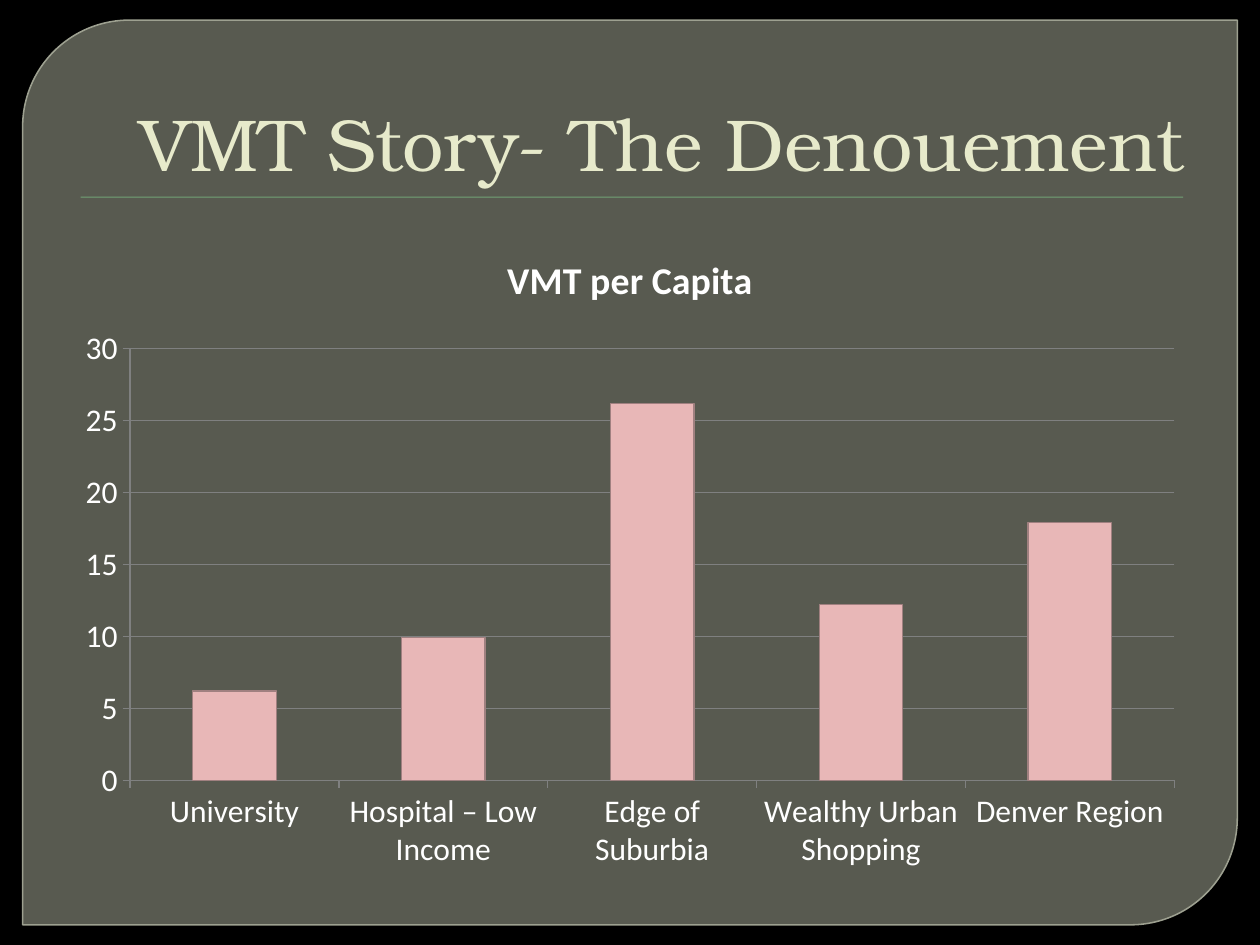
"""Build the VMT per capita slide with its framed panel and column chart."""
import pptx
import pptx.chart.data
import pptx.dml.color
import pptx.enum.chart
import pptx.enum.shapes
import pptx.enum.text
import pptx.oxml
import pptx.oxml.ns
import pptx.util
from pptx.util import Inches

COLORS = {
    "background": "000000",
    "panel": "888B7B",
    "panel_line": "9DA090",
    "rule": "72A376",
    "title": "E7EACB",
    "chart_text": "FFFFFF",
    "bar": "E8B7B7",
    "bar_line": "A08080",
    "grid": "7F8080",
}
VMT_PER_CAPITA = {
    "University": 6.2,
    "Hospital – Low Income": 9.9,
    "Edge of Suburbia": 26.2,
    "Wealthy Urban Shopping": 12.2,
    "Denver Region": 17.9,
}


def color(name):
    return pptx.dml.color.RGBColor.from_string(COLORS[name])


def set_fill(fill, name):
    fill.solid()
    fill.fore_color.rgb = color(name)


def set_line(line, name, width):
    set_fill(line.fill, name)
    line.width = pptx.util.Pt(width)


def set_font(font, family, size, name, bold=False):
    font.name = family
    font.size = pptx.util.Pt(size)
    font.bold = bold
    font.color.rgb = color(name)


def set_opacity(shape, percent):
    namespace = pptx.oxml.ns.nsdecls("a")
    alpha = pptx.oxml.parse_xml(f'<a:alpha {namespace} val="{percent * 1000}"/>')
    shape.element.spPr.find(".//" + pptx.oxml.ns.qn("a:srgbClr")).append(alpha)


def add_panel(slide):
    panel = slide.shapes.add_shape(
        pptx.enum.shapes.MSO_SHAPE.ROUND_2_DIAG_RECTANGLE,
        Inches(0.18), Inches(0.16), Inches(9.64), Inches(7.18))
    panel.adjustments[0] = 0.118
    panel.adjustments[1] = 0
    panel.shadow.inherit = False
    set_fill(panel.fill, "panel")
    set_opacity(panel, 65)
    set_line(panel.line, "panel_line", 0.87)


def add_rule(slide):
    rule = slide.shapes.add_shape(
        pptx.enum.shapes.MSO_SHAPE.RECTANGLE,
        Inches(0.64), Inches(1.56), Inches(8.75), Inches(0.01))
    rule.shadow.inherit = False
    set_fill(rule.fill, "rule")
    rule.line.fill.background()


def fill_title(slide, text):
    title = slide.shapes.title
    title.left, title.top = Inches(0.5), Inches(0.28)
    title.width, title.height = Inches(9), Inches(1.25)
    frame = title.text_frame
    frame.text = text
    frame.word_wrap = True
    frame.auto_size = pptx.enum.text.MSO_AUTO_SIZE.NONE
    frame.vertical_anchor = pptx.enum.text.MSO_ANCHOR.BOTTOM
    paragraph = frame.paragraphs[0]
    paragraph.alignment = pptx.enum.text.PP_ALIGN.RIGHT
    set_font(paragraph.font, "TeX Gyre Bonum", 42, "title")
    title.element.getparent().append(title.element)


def add_column_chart(slide, name, values):
    data = pptx.chart.data.CategoryChartData()
    data.categories = list(values)
    data.add_series(name, list(values.values()))
    chart = slide.shapes.add_chart(
        pptx.enum.chart.XL_CHART_TYPE.COLUMN_CLUSTERED,
        Inches(0.5), Inches(1.8), Inches(9), Inches(5.2), data).chart
    set_font(chart.font, "Calibri", 18, "chart_text")
    chart.has_legend = False
    chart.has_title = True
    chart.chart_title.include_in_layout = False
    chart.chart_title.text_frame.text = name
    paragraph = chart.chart_title.text_frame.paragraphs[0]
    set_font(paragraph.font, "Calibri", 21.6, "chart_text", bold=True)

    for axis in (chart.category_axis, chart.value_axis):
        axis.major_tick_mark = pptx.enum.chart.XL_TICK_MARK.OUTSIDE
        set_line(axis.format.line, "grid", 0.75)
    chart.value_axis.minimum_scale = 0
    chart.value_axis.maximum_scale = 30
    chart.value_axis.major_unit = 5
    set_line(chart.value_axis.major_gridlines.format.line, "grid", 0.75)

    plot = chart.plots[0]
    plot.vary_by_categories = False
    plot.gap_width = 150
    bars = plot.series[0].format
    set_fill(bars.fill, "bar")
    set_line(bars.line, "bar_line", 0.75)


def main():
    presentation = pptx.Presentation()
    presentation.slide_width = Inches(10)
    presentation.slide_height = Inches(7.5)
    slide = presentation.slides.add_slide(presentation.slide_layouts[5])
    set_fill(slide.background.fill, "background")
    add_panel(slide)
    add_rule(slide)
    fill_title(slide, "VMT Story- The Denouement")
    add_column_chart(slide, "VMT per Capita", VMT_PER_CAPITA)
    presentation.save("out.pptx")


if __name__ == "__main__":
    main()
